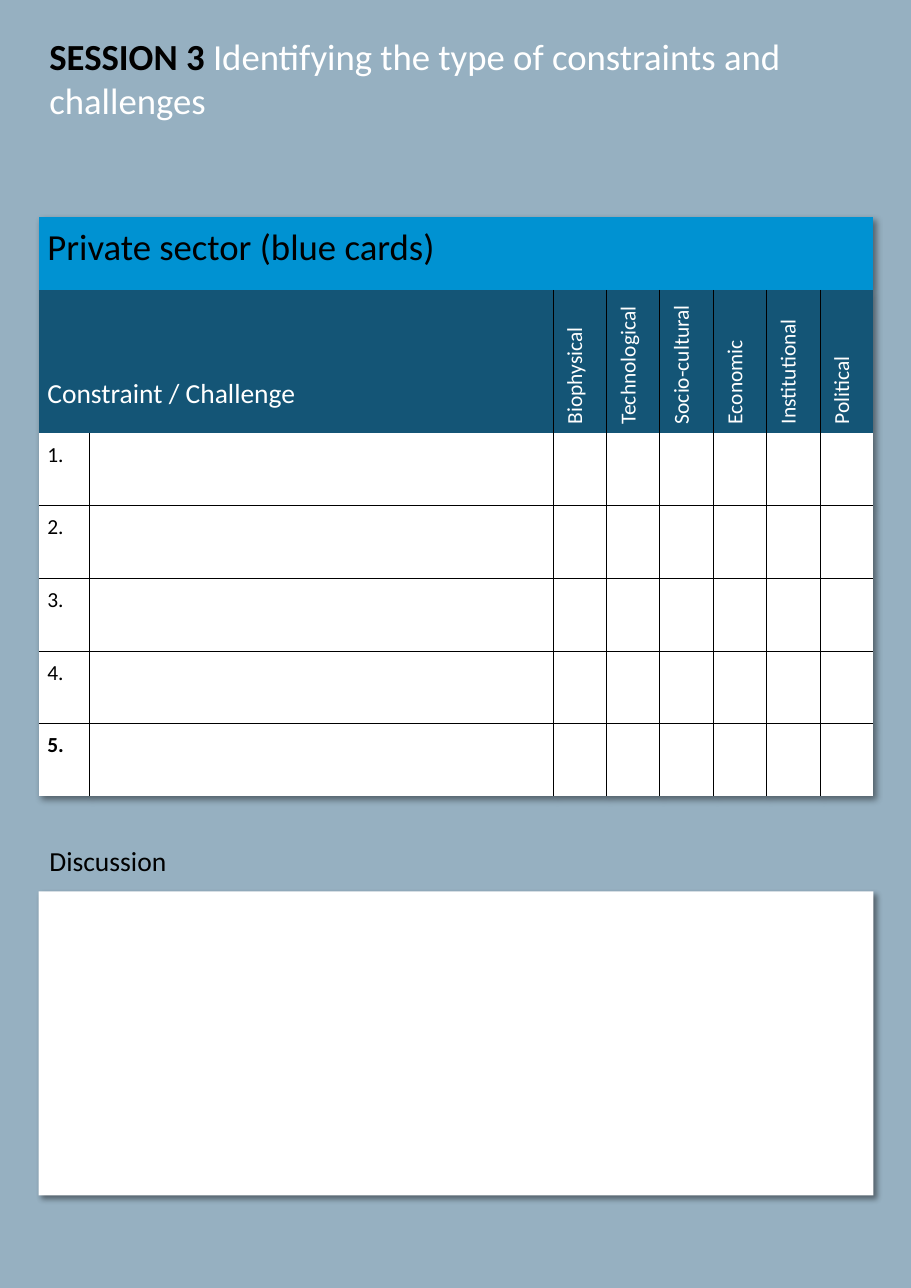
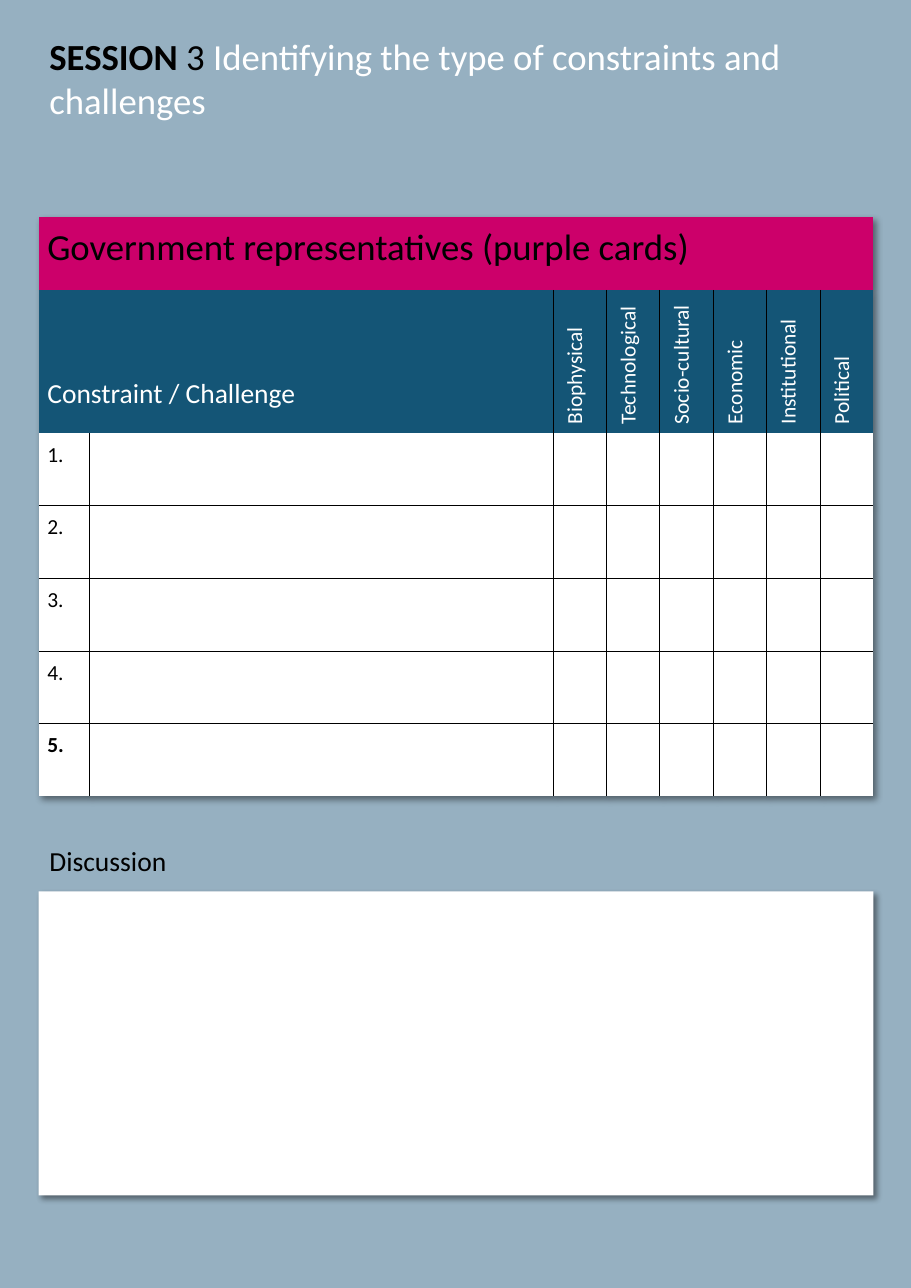
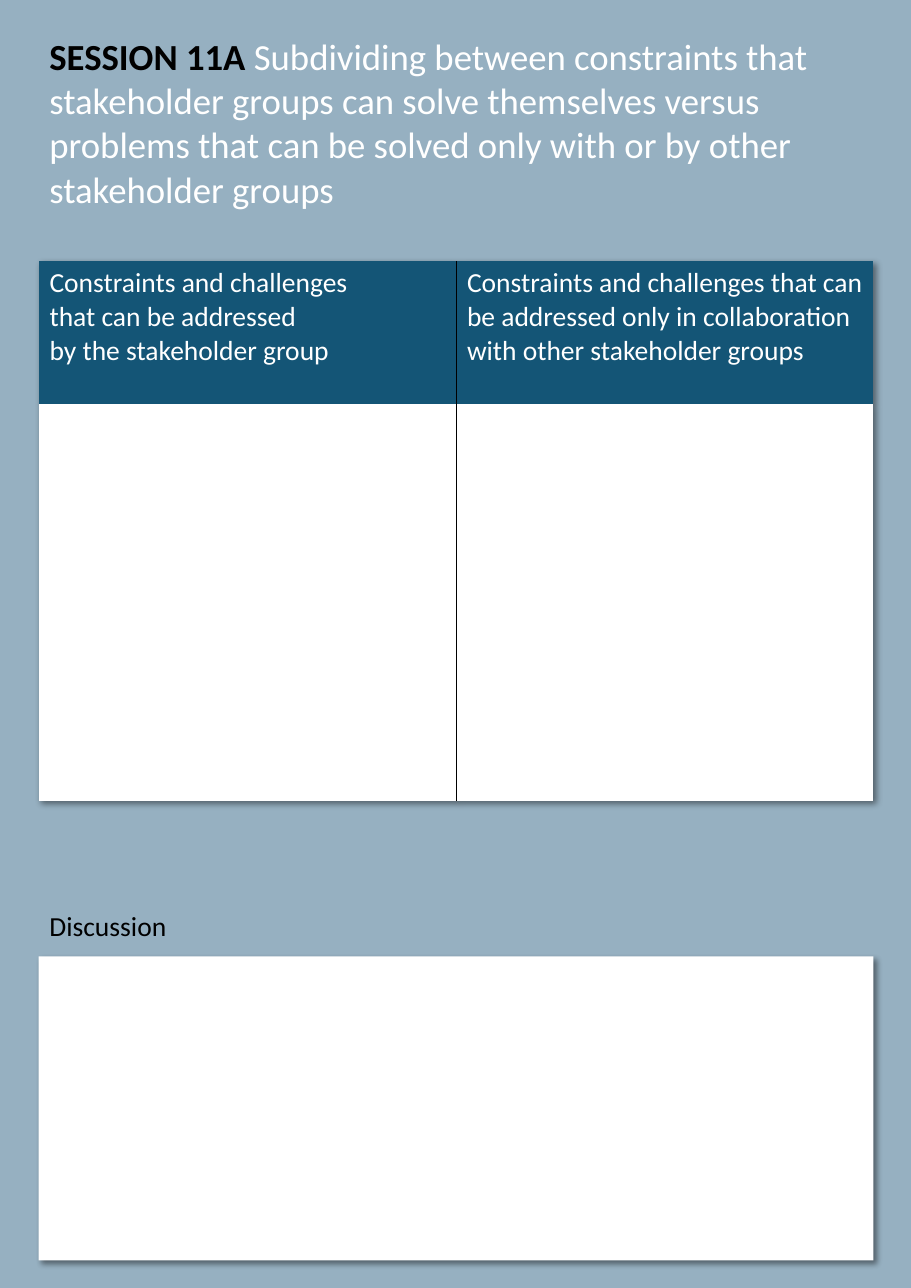
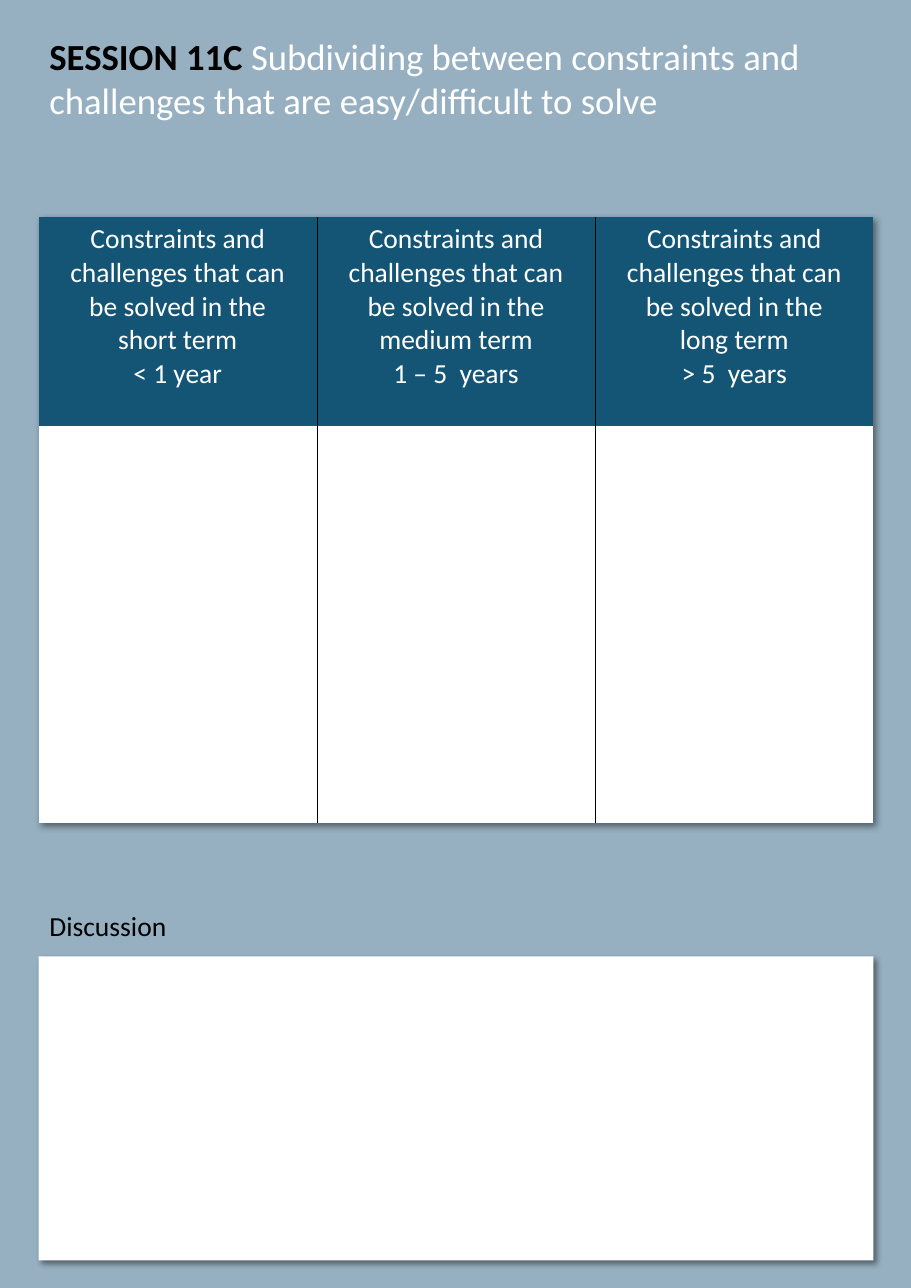
from dataclasses import dataclass
from typing import Optional

from lxml.etree import SubElement
from pptx import Presentation
from pptx.dml.color import RGBColor as RGB
from pptx.enum.shapes import MSO_SHAPE as Shape
from pptx.enum.text import MSO_ANCHOR as Anchor, MSO_AUTO_SIZE as Fit, PP_ALIGN as Align
from pptx.oxml.ns import qn
from pptx.util import Inches, Pt


@dataclass(frozen=True)
class Theme:
    font: str = "Calibri"
    page: str = "96B0C1"
    head: str = "145576"
    blue: str = "0092D2"
    purple: str = "CC006A"
    black: str = "000000"
    white: str = "FFFFFF"
    large: int = 24
    medium: int = 18
    small: int = 14
    line: float = 0.5


@dataclass(frozen=True)
class Part:
    text: str
    color: str
    bold: bool = False


@dataclass(frozen=True)
class Cell:
    text: str = ""
    fill: str = "FFFFFF"
    color: str = "FFFFFF"
    size: int = 18
    bold: bool = False
    span: int = 1
    align: Optional[Align] = None
    pad: Optional[float] = None
    top: Optional[float] = None
    upright: bool = False


@dataclass(frozen=True)
class Grid:
    top: float
    cols: list[float]
    rows: list[float]
    cells: list[list[Cell]]
    ruled: int  # first row with a line above it


@dataclass(frozen=True)
class Sheet:
    title: list[Part]
    deep: float
    grid: Grid
    talk: float  # top of the discussion label


T = Theme()
LEFT, WIDTH = 0.35, 7.58
PAD = 0.08
KINDS = ["Biophysical", "Technological", "Socio-cultural",
         "Economic", "Institutional", "Political"]


def style(run, size: int, color: str, bold: bool = False) -> None:
    font = run.font
    font.name, font.size, font.bold = T.font, Pt(size), bold
    font.color.rgb = RGB.from_string(color)


def shade(effects) -> None:
    """Put a soft shadow, down and to the right, in an effect list."""
    outer = SubElement(effects, qn("a:outerShdw"), blurRad=str(Pt(4)), dist=str(Pt(3)),
                       dir="2700000", algn="tl", rotWithShape="0")
    color = SubElement(outer, qn("a:srgbClr"), val=T.black)
    SubElement(color, qn("a:alpha"), val="43000")


def edge(props, side: str, drawn: bool) -> None:
    """Add one border of a cell, drawn or empty."""
    line = SubElement(props, qn(f"a:ln{side}"), w=str(Pt(T.line)))
    if drawn:
        fill = SubElement(line, qn("a:solidFill"))
        SubElement(fill, qn("a:srgbClr"), val=T.black)
    else:
        SubElement(line, qn("a:noFill"))


def add_text(slide, parts: list[Part], size: int, left: float, top: float,
             width: float, height: float) -> None:
    box = slide.shapes.add_textbox(Inches(left), Inches(top), Inches(width), Inches(height))
    frame = box.text_frame
    frame.word_wrap, frame.auto_size = True, Fit.SHAPE_TO_FIT_TEXT
    for part in parts:
        run = frame.paragraphs[0].add_run()
        run.text = part.text
        style(run, size, part.color, part.bold)


def fill_cell(cell, data: Cell) -> None:
    cell.fill.solid()
    cell.fill.fore_color.rgb = RGB.from_string(data.fill)
    if data.pad is not None:
        cell.margin_left = cell.margin_right = Inches(data.pad)
        cell.margin_top = cell.margin_bottom = Inches(data.pad)
    if data.top is not None:
        cell.margin_top = Inches(data.top)
    if data.upright:
        cell.vertical_anchor = Anchor.MIDDLE
        cell._tc.get_or_add_tcPr().set("vert", "vert270")
    if data.text:
        cell.text_frame.text = data.text
        for para in cell.text_frame.paragraphs:
            para.alignment = data.align
            for run in para.runs:
                style(run, data.size, data.color, data.bold)


def add_grid(slide, grid: Grid) -> None:
    count, wide = len(grid.rows), len(grid.cols)
    frame = slide.shapes.add_table(count, wide, Inches(LEFT), Inches(grid.top),
                                   Inches(WIDTH), Inches(sum(grid.rows)))
    table = frame.table
    table.first_row = table.horz_banding = False
    for col, width in zip(table.columns, grid.cols):
        col.width = Inches(width)
    for row, height in zip(table.rows, grid.rows):
        row.height = Inches(height)
    props = table._tbl.tblPr
    effects = SubElement(props, qn("a:effectLst"))
    props.insert(0, effects)
    shade(effects)
    for r, cells in enumerate(grid.cells):
        start = 0
        for data in cells:
            end = start + data.span
            for c in range(start, end):
                tc = table.cell(r, c)._tc.get_or_add_tcPr()
                edge(tc, "L", c == start > 0)
                edge(tc, "R", end < wide and (c == start or c == end - 1))
                edge(tc, "T", r >= grid.ruled)
                edge(tc, "B", grid.ruled <= r + 1 < count)
            cell = table.cell(r, start)
            if data.span > 1:
                cell.merge(table.cell(r, end - 1))
            fill_cell(cell, data)
            start = end


def add_talk(slide, top: float) -> None:
    """Draw the discussion label and the empty panel under it."""
    add_text(slide, [Part("Discussion", T.black)], T.medium, LEFT, top, 3.37, 0.4)
    panel = slide.shapes.add_shape(Shape.RECTANGLE, Inches(LEFT), Inches(top + 0.48),
                                   Inches(WIDTH), Inches(2.76))
    panel.fill.solid()
    panel.fill.fore_color.rgb = RGB.from_string(T.white)
    panel.line.fill.background()
    panel.shadow.inherit = False
    shade(panel._element.spPr.find(qn("a:effectLst")))


def card_grid(name: str, color: str) -> Grid:
    """Five numbered rows to be marked by kind of constraint."""
    wide = [0.46, 4.21]
    mark = (WIDTH - sum(wide)) / len(KINDS)
    band = [Cell(name, color, T.black, T.large, span=len(KINDS) + 2, pad=PAD)]
    head = [Cell("Constraint / Challenge", T.head, span=2, pad=PAD, top=0.79)]
    head += [Cell(kind, T.head, size=T.small, pad=PAD, upright=True) for kind in KINDS]
    body = [[Cell(f"{n}.", color=T.black, size=T.small, bold=n == 5, pad=PAD)]
            + [Cell()] * (len(KINDS) + 1) for n in range(1, 6)]
    return Grid(1.97, wide + [mark] * len(KINDS), [0.66, 1.3] + [0.66] * 5,
                [band, head] + body, 3)


def column_grid(top: float, height: float, heads: list[str],
                align: Optional[Align] = None) -> Grid:
    """Equal columns, each with a heading over a blank field."""
    count = len(heads)
    return Grid(top, [WIDTH / count] * count, [height, 3.6],
                [[Cell(head, T.head, align=align) for head in heads], [Cell()] * count], 2)


TYPES = Part("Identifying the type of constraints and challenges", T.white)
SOLVED = "Constraints and challenges that can\nbe solved in the"

SHEETS = [
    Sheet([Part("SESSION 3 ", T.black, True), TYPES], 0.91,
          card_grid("Private sector (blue cards)", T.blue), 7.61),
    Sheet([Part("SESSION ", T.black, True), Part("3 ", T.black), TYPES], 0.91,
          card_grid("Government representatives (purple cards)", T.purple), 7.61),
    Sheet([Part("SESSION 11A ", T.black, True),
           Part("Subdividing between constraints that stakeholder groups can solve "
                "themselves versus problems that can be solved only with or by other "
                "stakeholder groups", T.white)], 1.72,
          column_grid(2.37, 1.3, [
              "Constraints and challenges\vthat can be addressed\vby the stakeholder group",
              "Constraints and challenges that can be addressed only in collaboration "
              "with other stakeholder groups"]), 8.2),
    Sheet([Part("SESSION 11C ", T.black, True),
           Part("Subdividing between constraints and challenges that are "
                "easy/difficult to solve", T.white)], 0.91,
          column_grid(1.97, 1.9, [
              f"{SOLVED}\nshort term\n< 1 year",
              f"{SOLVED} medium term\n1 – 5  years",
              f"{SOLVED}\nlong term\n> 5  years"], Align.CENTER), 8.2),
]


def main() -> None:
    deck = Presentation()
    deck.slide_width, deck.slide_height = Inches(8.27), Inches(11.69)
    back = deck.slide_master.background.fill
    back.solid()
    back.fore_color.rgb = RGB.from_string(T.page)
    for sheet in SHEETS:
        slide = deck.slides.add_slide(deck.slide_layouts[6])
        add_text(slide, sheet.title, T.large, LEFT, 0.26, WIDTH, sheet.deep)
        add_grid(slide, sheet.grid)
        add_talk(slide, sheet.talk)
    deck.save("out.pptx")


if __name__ == "__main__":
    main()
